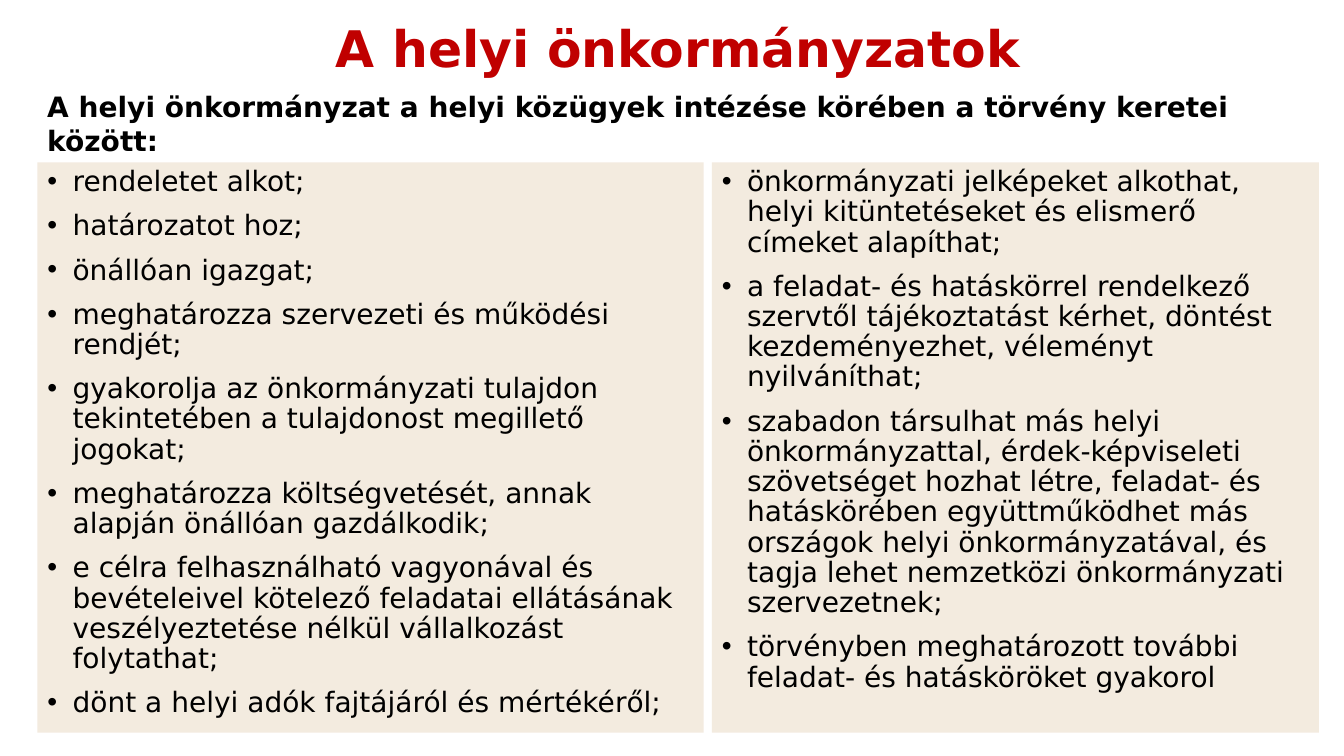
from lxml import etree
from pptx import Presentation
from pptx import util as u
from pptx.dml.color import RGBColor
from pptx.enum import text
from pptx.oxml.ns import qn

TITLE = "A helyi önkormányzatok"
LEAD = "A helyi önkormányzat a helyi közügyek intézése körében a törvény keretei között:"
POWERS = [
    "rendeletet alkot;",
    "határozatot hoz;",
    "önállóan igazgat;",
    "meghatározza szervezeti és működési rendjét;",
    "gyakorolja az önkormányzati tulajdon tekintetében a tulajdonost megillető jogokat;",
    "meghatározza költségvetését, annak alapján önállóan gazdálkodik;",
    "e célra felhasználható vagyonával és bevételeivel kötelező feladatai ellátásának "
    "veszélyeztetése nélkül vállalkozást folytathat;",
    "dönt a helyi adók fajtájáról és mértékéről;",
]
RIGHTS = [
    "önkormányzati jelképeket alkothat, helyi kitüntetéseket és elismerő címeket alapíthat;",
    "a feladat- és hatáskörrel rendelkező szervtől tájékoztatást kérhet, döntést "
    "kezdeményezhet, véleményt nyilváníthat;",
    "szabadon társulhat más helyi önkormányzattal, érdek-képviseleti szövetséget hozhat "
    "létre, feladat- és hatáskörében együttműködhet más országok helyi önkormányzatával, "
    "és tagja lehet nemzetközi önkormányzati szervezetnek;",
    "törvényben meghatározott további feladat- és hatásköröket gyakorol",
]

FONT = "DejaVu Sans"
BLACK, RED, SAND = "000000", "C00000", "F3EBDF"
WIDTH, HEIGHT = 13.33, 7.5
LEFT, TOP, SPAN = 0.37, 0.18, 12.71
TITLE_HEIGHT, LEAD_HEIGHT, LIST_HEIGHT = 0.66, 0.77, 5.66
GAP, LEFT_COLUMN = 0.08, 6.61
INDENT = 0.25


def color(code):
    return RGBColor.from_string(code)


def place(box, left, top, width, height):
    box.left, box.top, box.width, box.height = map(u.Inches, (left, top, width, height))


def write(box, lines, size=20, ink=BLACK, bold=False, align=text.PP_ALIGN.LEFT,
          anchor=text.MSO_ANCHOR.TOP, spacing=0.9, before=0, bullet=None):
    frame = box.text_frame
    frame.word_wrap = True
    frame.auto_size = text.MSO_AUTO_SIZE.NONE
    frame.vertical_anchor = anchor
    for index, line in enumerate(lines):
        para = frame.add_paragraph() if index else frame.paragraphs[0]
        para.alignment = align
        para.line_spacing = spacing
        para.space_before = u.Pt(before if index else 0)
        if bullet:
            props = para._p.get_or_add_pPr()
            props.set("marL", str(u.Inches(INDENT)))
            props.set("indent", str(-u.Inches(INDENT)))
            etree.SubElement(props, qn("a:buFont")).set("typeface", "Arial")
            etree.SubElement(props, qn("a:buChar")).set("char", bullet)
        span = para.add_run()
        span.text = line
        span.font.name = FONT
        span.font.size = u.Pt(size)
        span.font.bold = bold
        span.font.color.rgb = color(ink)


def main():
    deck = Presentation()
    deck.slide_width, deck.slide_height = u.Inches(WIDTH), u.Inches(HEIGHT)
    page = deck.slides.add_slide(deck.slide_layouts[3])
    title, *columns = page.placeholders

    place(title, LEFT, TOP, SPAN, TITLE_HEIGHT)
    write(title, [TITLE], size=36, ink=RED, bold=True,
          align=text.PP_ALIGN.CENTER, anchor=text.MSO_ANCHOR.MIDDLE)

    lead_top = TOP + TITLE_HEIGHT
    lead = page.shapes.add_textbox(0, 0, 0, 0)
    place(lead, LEFT, lead_top, SPAN, LEAD_HEIGHT)
    write(lead, [LEAD], bold=True, spacing=1.0)

    left = LEFT
    widths = LEFT_COLUMN, SPAN - LEFT_COLUMN - GAP
    for column, lines, width in zip(columns, (POWERS, RIGHTS), widths):
        place(column, left, lead_top + LEAD_HEIGHT, width, LIST_HEIGHT)
        column.fill.solid()
        column.fill.fore_color.rgb = color(SAND)
        write(column, lines, before=10, bullet="•")
        left += width + GAP

    deck.save("out.pptx")


if __name__ == "__main__":
    main()
